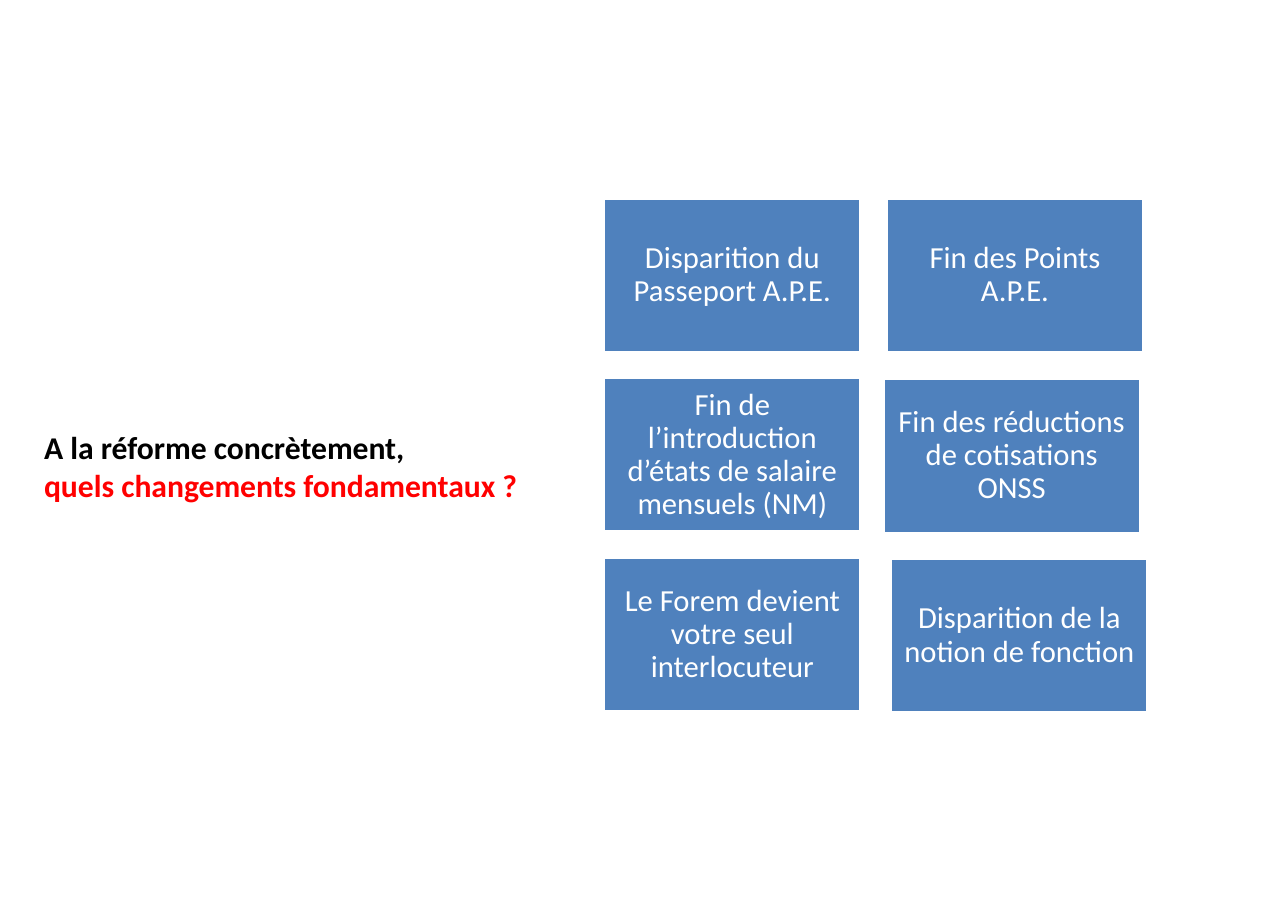
from pptx import Presentation
from pptx.dml.color import RGBColor
from pptx.enum.shapes import MSO_SHAPE
from pptx.enum.text import MSO_ANCHOR, PP_ALIGN
from pptx.util import Inches, Pt

FONT = "Calibri"
COLORS = {"card": "4F81BD", "white": "FFFFFF", "black": "000000", "accent": "FF0000"}
SLIDE_WIDTH, SLIDE_HEIGHT = 11.69, 8.27

TITLE_BOX = (0.29, 3.64, 4.68, 0.99)
TITLE_LINES = [
    ("A la réforme concrètement,", "black"),
    ("quels changements fondamentaux ?", "accent"),
]

GRID_BOX = (5.48, 1.8, 4.9, 4.66)
COLUMNS, ROWS = 2, 3
GAP = 0.23
# Each card: text, then its small shift from the grid cell (right, down)
CARDS = [
    ("Disparition du Passeport A.P.E.", 0, 0),
    ("Fin des Points A.P.E.", 0, 0),
    ("Fin de l’introduction d’états de salaire mensuels (NM)", 0, 0),
    ("Fin des réductions de cotisations ONSS", -0.03, 0.01),
    ("Le Forem devient votre seul interlocuteur", 0, 0),
    ("Disparition de la notion de fonction", 0.04, 0.01),
]


def color(name):
    return RGBColor.from_string(COLORS[name])


def set_frame(frame, anchor, horizontal, vertical):
    frame.word_wrap = True
    frame.vertical_anchor = anchor
    frame.margin_left = frame.margin_right = Inches(horizontal)
    frame.margin_top = frame.margin_bottom = Inches(vertical)


def add_title(slide, box):
    frame = slide.shapes.add_textbox(*map(Inches, box)).text_frame
    set_frame(frame, MSO_ANCHOR.BOTTOM, 0.11, 0.06)
    paragraph = frame.paragraphs[0]
    paragraph.font.name = FONT
    paragraph.font.size = Pt(20.7)
    paragraph.font.bold = True
    for index, (text, color_name) in enumerate(TITLE_LINES):
        if index:
            paragraph.add_line_break()
        run = paragraph.add_run()
        run.text = text
        run.font.color.rgb = color(color_name)


def add_card(slide, box, text):
    card = slide.shapes.add_shape(MSO_SHAPE.RECTANGLE, *map(Inches, box))
    card.shadow.inherit = False
    card.fill.solid()
    card.fill.fore_color.rgb = color("card")
    card.line.color.rgb = color("white")
    card.line.width = Pt(2)
    set_frame(card.text_frame, MSO_ANCHOR.MIDDLE, 0.08, 0.08)
    paragraph = card.text_frame.paragraphs[0]
    paragraph.text = text
    paragraph.alignment = PP_ALIGN.CENTER
    paragraph.line_spacing = 0.9
    paragraph.font.name = FONT
    paragraph.font.size = Pt(20)
    paragraph.font.color.rgb = color("white")


def add_card_grid(slide, box):
    left, top, width, height = box
    card_width = (width - GAP * (COLUMNS - 1)) / COLUMNS
    card_height = (height - GAP * (ROWS - 1)) / ROWS
    for index, (text, shift_right, shift_down) in enumerate(CARDS):
        row, column = divmod(index, COLUMNS)
        card_left = left + column * (card_width + GAP) + shift_right
        card_top = top + row * (card_height + GAP) + shift_down
        add_card(slide, (card_left, card_top, card_width, card_height), text)


def main():
    presentation = Presentation()
    presentation.slide_width = Inches(SLIDE_WIDTH)
    presentation.slide_height = Inches(SLIDE_HEIGHT)
    slide = presentation.slides.add_slide(presentation.slide_layouts[6])
    add_title(slide, TITLE_BOX)
    add_card_grid(slide, GRID_BOX)
    presentation.save("out.pptx")


if __name__ == "__main__":
    main()
